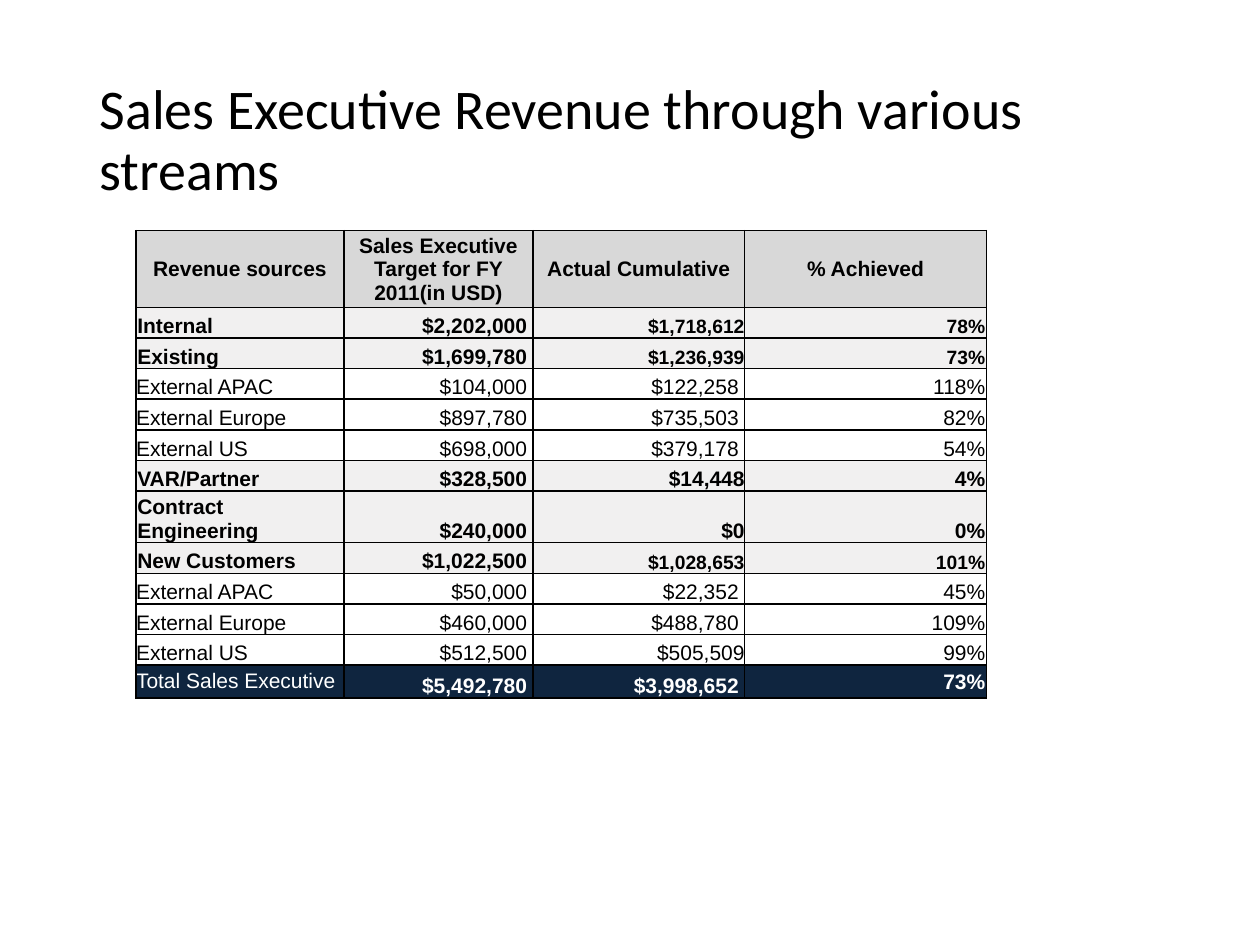
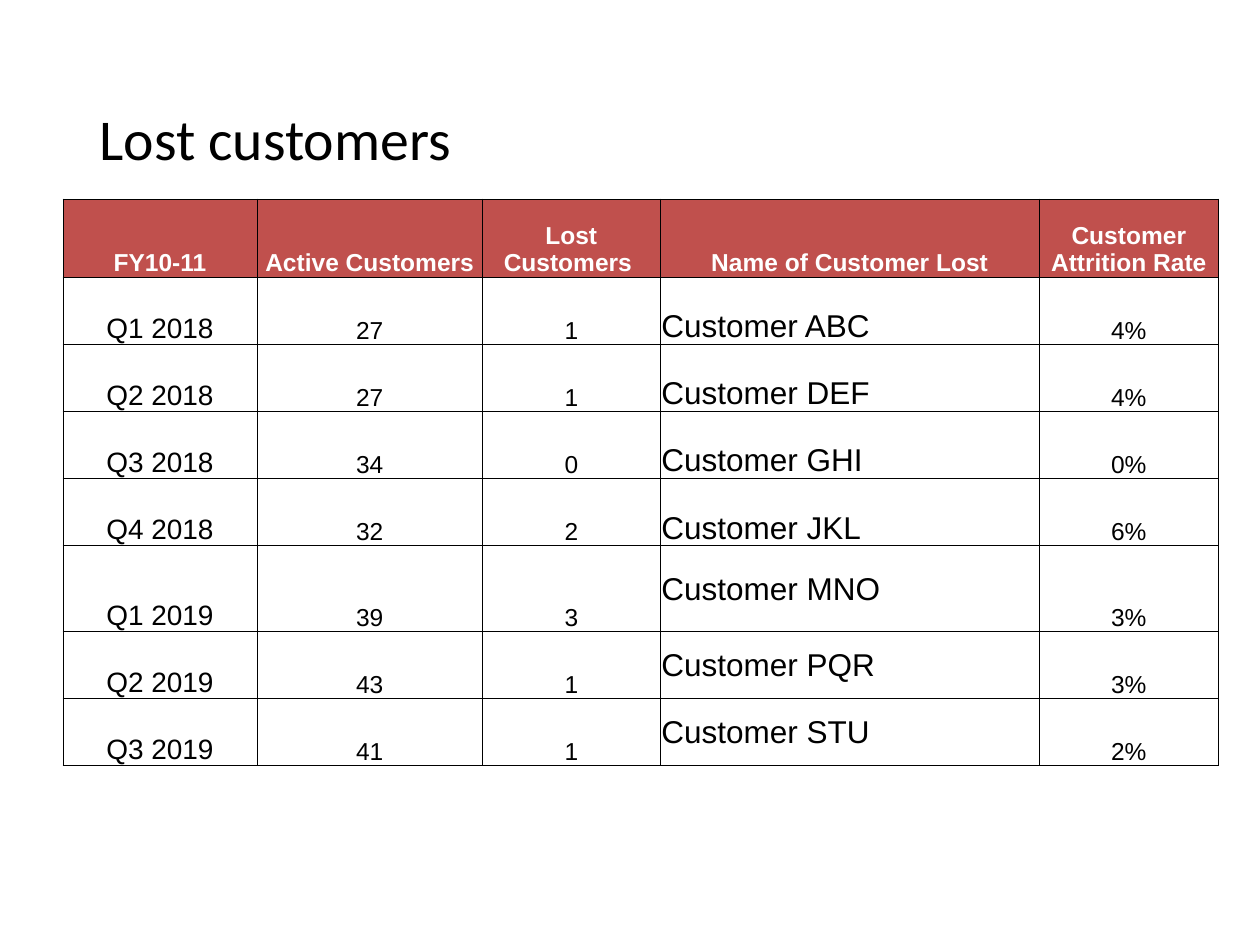
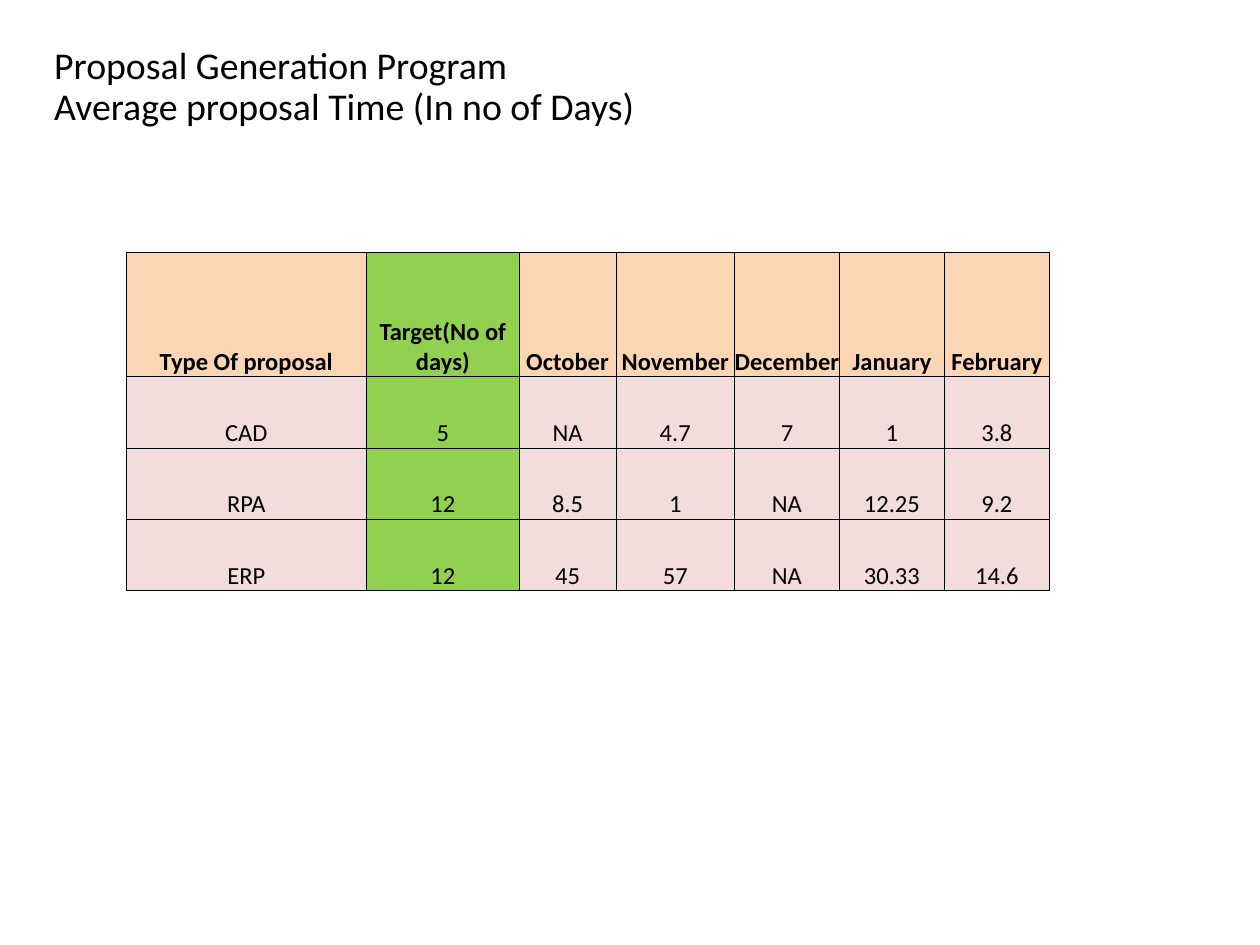
from dataclasses import dataclass

from lxml import etree
from pptx import Presentation
from pptx.dml.color import RGBColor
from pptx.enum import text
from pptx.oxml import ns
from pptx.util import Inches, Pt

LEFT, CENTER, RIGHT = text.PP_ALIGN.LEFT, text.PP_ALIGN.CENTER, text.PP_ALIGN.RIGHT
MIDDLE, BOTTOM = text.MSO_ANCHOR.MIDDLE, text.MSO_ANCHOR.BOTTOM


@dataclass(frozen=True)
class Theme:
    title_font: str = "Calibri"
    table_font: str = "Arial"
    ink: str = "000000"
    white: str = "FFFFFF"
    header_grey: str = "D8D8D8"
    group_grey: str = "F1F0F0"
    total_navy: str = "0F253F"
    header_red: str = "C0504D"
    header_peach: str = "FCD5B4"
    target_green: str = "92D050"
    body_pink: str = "F2DDDC"
    small: float = 11
    body: float = 12
    medium: float = 14
    quarter: float = 16
    customer: float = 18


theme = Theme()
deck = Presentation()
deck.slide_width, deck.slide_height = Inches(10), Inches(7.5)


def add_table_page(title_lines, title_area, title_size, area, columns, heights):
    """Add a titled page with a table; sizes of None share the space left over."""
    page = deck.slides.add_slide(deck.slide_layouts[5])
    title = page.shapes.title
    title.left, title.top, title.width, title.height = map(Inches, title_area)
    frame = title.text_frame
    frame.auto_size = text.MSO_AUTO_SIZE.NONE
    frame.word_wrap = True
    frame.vertical_anchor = MIDDLE
    para = frame.paragraphs[0]
    para.alignment = LEFT
    para.line_spacing = 0.9
    for number, line in enumerate(title_lines):
        if number:
            para.add_line_break()
        span = para.add_run()
        span.text = line
        span.font.name, span.font.size = theme.title_font, Pt(title_size)
        span.font.color.rgb = RGBColor.from_string(theme.ink)

    table = page.shapes.add_table(len(heights), len(columns), *map(Inches, area)).table
    table.first_row = table.horz_banding = False
    for parts, sizes, total, side in ((table.columns, columns, area[2], "width"),
                                      (table.rows, heights, area[3], "height")):
        fixed = [size for size in sizes if size is not None]
        share = (total - sum(fixed)) / max(1, len(sizes) - len(fixed))
        for part, size in zip(parts, sizes):
            setattr(part, side, Inches(share if size is None else size))
    return page, table


def fill_cell(cell, words, size, align=CENTER, anchor=BOTTOM, bold=False, color=theme.ink,
              fill=None, font=theme.table_font, pad=0, border=0.5):
    cell.margin_left = cell.margin_top = cell.margin_right = Inches(pad)
    cell.margin_bottom = 0
    cell.vertical_anchor = anchor
    para = cell.text_frame.paragraphs[0]
    para.alignment = align
    span = para.add_run()
    span.text = words
    span.font.name, span.font.size, span.font.bold = font, Pt(size), bold
    span.font.color.rgb = RGBColor.from_string(color)
    if fill:
        cell.fill.solid()
        cell.fill.fore_color.rgb = RGBColor.from_string(fill)
    else:
        cell.fill.background()
    properties = cell._tc.get_or_add_tcPr()
    for position, side in enumerate(("lnL", "lnR", "lnT", "lnB")):
        line = etree.Element(ns.qn(f"a:{side}"), w=str(Pt(border)))
        solid = etree.SubElement(line, ns.qn("a:solidFill"))
        etree.SubElement(solid, ns.qn("a:srgbClr"), val=theme.ink)
        properties.insert(position, line)


# Slide 1: revenue by stream
revenue_rows = [
    ("Revenue sources", "Sales Executive Target for FY 2011(in USD)", "Actual Cumulative", "% Achieved"),
    ("Internal", "$2,202,000 ", "$1,718,612", "78%"),
    ("Existing", "$1,699,780 ", "$1,236,939", "73%"),
    ("External APAC", "$104,000 ", "$122,258 ", "118%"),
    ("External Europe", "$897,780 ", "$735,503 ", "82%"),
    ("External US", "$698,000 ", "$379,178 ", "54%"),
    ("VAR/Partner", "$328,500 ", "$14,448", "4%"),
    ("Contract Engineering", "$240,000 ", "$0", "0%"),
    ("New Customers", "$1,022,500 ", "$1,028,653", "101%"),
    ("External APAC", "$50,000 ", "$22,352 ", "45%"),
    ("External Europe", "$460,000 ", "$488,780 ", "109%"),
    ("External US", "$512,500 ", "$505,509", "99%"),
    ("Total Sales Executive", "$5,492,780 ", "$3,998,652 ", "73%"),
]
page, table = add_table_page(
    ["Sales Executive Revenue through various streams"], (0.69, 0.4, 8.62, 1.45), 32,
    (1.08, 1.83, 6.75, 3.71), [1.65, 1.5, 1.68, 1.92],
    [0.61] + [None] * 6 + [0.41] + [None] * 4 + [0.26])
small_actuals = ("Internal", "Existing", "New Customers")
for row, record in enumerate(revenue_rows):
    header, total = row == 0, row == len(revenue_rows) - 1
    group = not header and not total and not record[0].startswith("External")
    fill = (theme.header_grey if header else theme.total_navy if total
            else theme.group_grey if group else None)
    for column, words in enumerate(record):
        edge = column in (0, 3)
        fill_cell(table.cell(row, column), words,
                  theme.small if record[0] in small_actuals and column > 1 else theme.body,
                  align=CENTER if header else RIGHT if column else LEFT,
                  anchor=MIDDLE if header or (total and edge) else BOTTOM,
                  bold=header or group or (total and column > 0),
                  color=theme.white if total else theme.ink, fill=fill,
                  pad=0.01 if header or (edge and (group or column == 3)) else 0, border=1)

# Slide 2: lost customers by quarter
customer_rows = [
    ("FY10-11", "Active Customers", "Lost Customers ", "Name of Customer Lost", "Customer Attrition Rate"),
    ("Q1 2018", "27", "1", "Customer ABC", "4%"),
    ("Q2 2018", "27", "1", "Customer DEF", "4%"),
    ("Q3 2018", "34", "0", "Customer GHI", "0%"),
    ("Q4 2018", "32", "2", "Customer JKL", "6%"),
    ("Q1 2019", "39", "3", "Customer MNO", "3%"),
    ("Q2 2019", "43", "1", "Customer PQR", "3%"),
    ("Q3 2019", "41", "1", "Customer STU", "2%"),
]
page, table = add_table_page(
    ["Lost customers"], (0.69, 0.4, 8.62, 1.45), 33,
    (0.5, 1.58, 9.17, 4.5), [1.54, 1.79, 1.41, 3.01, 1.42],
    [0.62] + [None] * 4 + [0.68] + [None] * 2)
column_sizes = [theme.quarter, theme.medium, theme.medium, theme.customer, theme.medium]
for row, record in enumerate(customer_rows):
    for column, words in enumerate(record):
        cell = table.cell(row, column)
        if row == 0:
            fill_cell(cell, words, theme.medium, bold=True, color=theme.white, fill=theme.header_red)
        elif column == 3:
            fill_cell(cell, words, theme.customer, align=LEFT, pad=0.01,
                      anchor=MIDDLE if record[0].endswith("2019") else BOTTOM)
        else:
            fill_cell(cell, words, column_sizes[column])

# Slide 3: proposal times by month
proposal_rows = [
    ("Type Of proposal", "Target(No of days)", "October", "November", "December", "January", "February"),
    ("CAD", "5", "NA", "4.7", "7", "1", "3.8"),
    ("RPA", "12", "8.5", "1", "NA", "12.25", "9.2"),
    ("ERP", "12", "45", "57", "NA", "30.33", "14.6"),
]
page, table = add_table_page(
    ["Proposal Generation Program", "Average proposal Time (In no of Days)"],
    (0.33, 0, 9.17, 1.25), 21.6,
    (1, 2, 7.33, 2.69), [1.91, 1.21, 0.77, 0.94, None, None, None], [0.99, None, None, None])
page.shapes.title.text_frame.margin_top = Inches(0.19)
for row, record in enumerate(proposal_rows):
    row_fill = theme.body_pink if row else theme.header_peach
    for column, words in enumerate(record):
        fill_cell(table.cell(row, column), words, theme.medium, bold=row == 0,
                  fill=theme.target_green if column == 1 else row_fill, font=theme.title_font)

deck.save("out.pptx")
